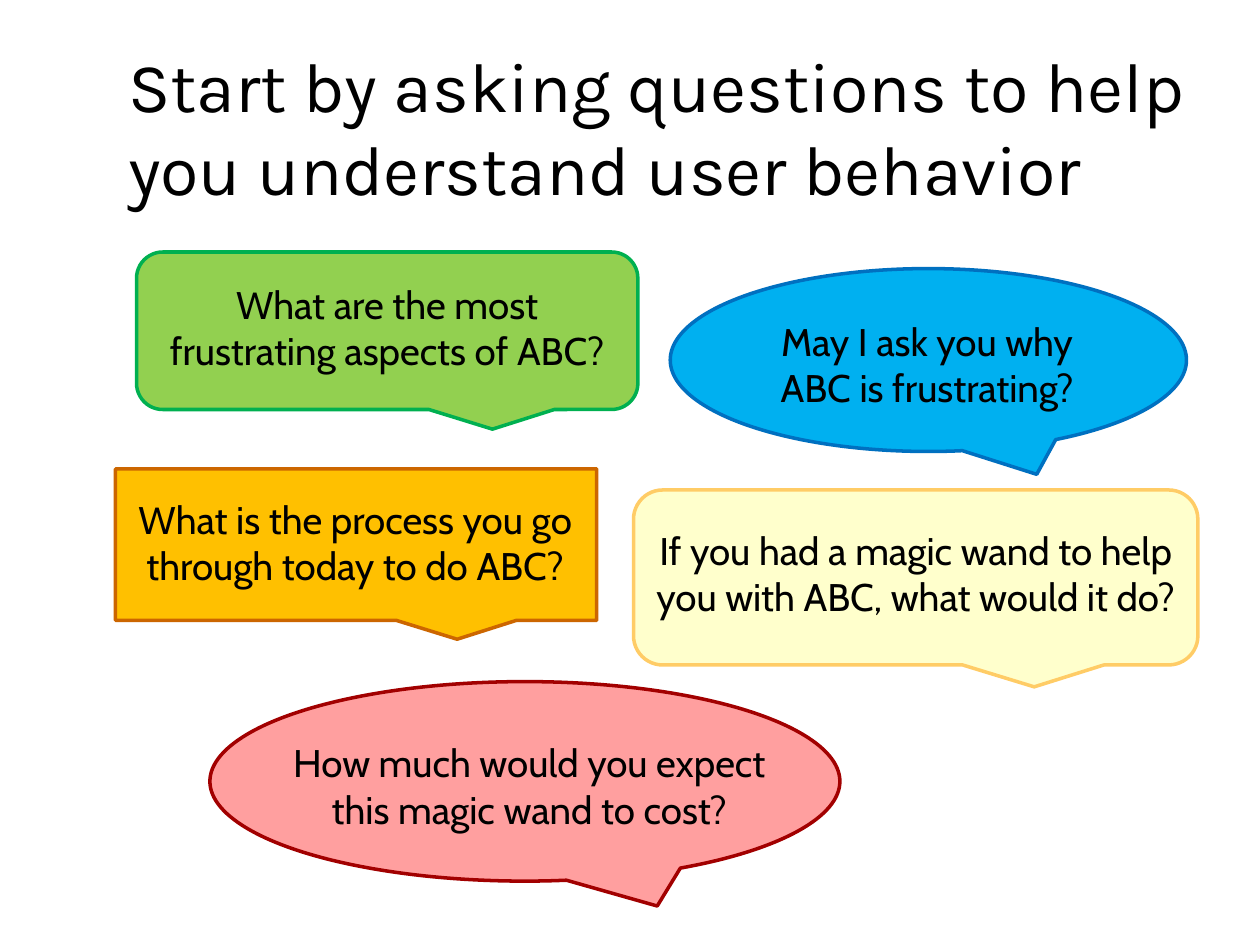
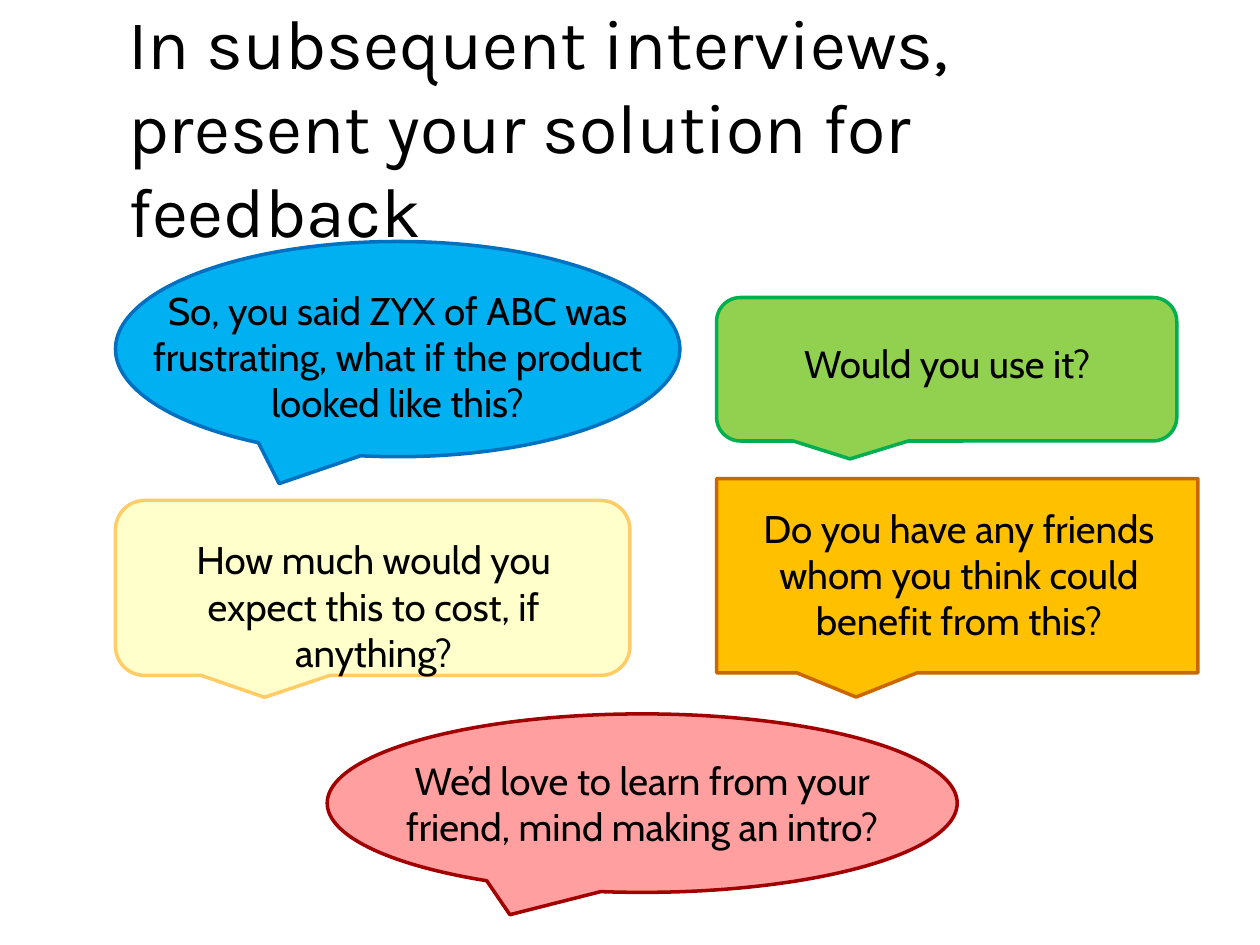
from dataclasses import dataclass

from pptx import Presentation
from pptx.dml.color import RGBColor
from pptx.enum.shapes import MSO_SHAPE
from pptx.enum.text import MSO_ANCHOR, MSO_AUTO_SIZE, PP_ALIGN
from pptx.slide import Slide
from pptx.text.text import TextFrame
from pptx.util import Pt

HUES = {
    "ink": "000000",
    "green": "92D050", "green_edge": "00B050",
    "cream": "FFFFCC", "cream_edge": "FFCC66",
    "gold": "FFC000", "gold_edge": "CC6600",
    "pink": "FF9F9F", "pink_edge": "A20000",
    "blue": "00B0F0", "blue_edge": "0070C0",
}
FORMS = {
    "green": MSO_SHAPE.ROUNDED_RECTANGULAR_CALLOUT,
    "cream": MSO_SHAPE.ROUNDED_RECTANGULAR_CALLOUT,
    "gold": MSO_SHAPE.RECTANGULAR_CALLOUT,
    "pink": MSO_SHAPE.OVAL_CALLOUT,
    "blue": MSO_SHAPE.OVAL_CALLOUT,
}
TAIL = 0.21
Box = tuple[float, float, float, float]


@dataclass
class Bubble:
    """A speech bubble: its hue, outline box, text box and words."""
    hue: str
    box: Box
    area: Box
    words: str


@dataclass
class Page:
    """A slide: its title, the side its tails lean to, and its bubbles."""
    title: str
    lean: int
    bubbles: list[Bubble]


PAGES = [
    Page("Start by asking questions to help you understand user behavior", 1, [
        Bubble("green", (78, 144, 286.5, 90), (87, 157, 268.5, 60.5),
               "What are the most frustrating aspects of ABC?"),
        Bubble("cream", (362, 280, 322.5, 100), (362, 297.5, 322.5, 60.5),
               "If you had a magic wand to help you with ABC, what would it do?"),
        Bubble("gold", (66, 268, 275, 86.5), (69, 280, 268, 60.5),
               "What is the process you go through today to do ABC?"),
        Bubble("pink", (120, 389.5, 360, 114), (143.5, 419, 318, 60.5),
               "How much would you expect this magic wand to cost?"),
        Bubble("blue", (383, 153.5, 295, 104.5), (420, 178, 219.5, 60.5),
               "May I ask you why ABC is frustrating?"),
    ]),
    Page("In subsequent interviews, present your solution for feedback", -1, [
        Bubble("green", (409.5, 170, 263, 82), (418.5, 191, 245.5, 31),
               "Would you use it?"),
        Bubble("cream", (66, 286, 294, 100), (73.5, 303, 280, 60.5),
               "How much would you expect this to cost, if anything?"),
        Bubble("gold", (409.5, 273.5, 275, 111), (414, 285, 268, 112),
               "Do you have any friends whom you think could benefit from this?"),
        Bubble("pink", (187, 408, 360, 102), (208, 429, 318, 54),
               "We’d love to learn from your friend, mind making an intro?"),
        Bubble("blue", (66, 138, 322.5, 123), (66, 160.5, 322.5, 87),
               "So, you said ZYX of ABC was frustrating, what if the product looked like this?"),
    ]),
]


def tint(name: str) -> RGBColor:
    """Return the named colour."""
    return RGBColor.from_string(HUES[name])


def write(frame: TextFrame, words: str, face: str, size: float, align: PP_ALIGN) -> None:
    """Write one styled run into a wrapping text frame."""
    frame.word_wrap = True
    frame.auto_size = MSO_AUTO_SIZE.NONE
    para = frame.paragraphs[0]
    para.alignment = align
    run = para.add_run()
    run.text = words
    run.font.name = face
    run.font.size = Pt(size)
    run.font.color.rgb = tint("ink")


def head(slide: Slide, words: str) -> None:
    """Place and fill the slide title."""
    title = slide.shapes.title
    title.left, title.top, title.width, title.height = map(Pt, (66, 18, 618, 108))
    title.text_frame.vertical_anchor = MSO_ANCHOR.MIDDLE
    write(title.text_frame, words, "Karla", 40, PP_ALIGN.LEFT)


def draw(slide: Slide, bubble: Bubble, lean: int) -> None:
    """Draw a bubble and its words as one group."""
    group = slide.shapes.add_group_shape()
    shape = group.shapes.add_shape(FORMS[bubble.hue], *map(Pt, bubble.box))
    shape.adjustments[0] = lean * TAIL
    shape.shadow.inherit = False
    shape.fill.solid()
    shape.fill.fore_color.rgb = tint(bubble.hue)
    shape.line.color.rgb = tint(f"{bubble.hue}_edge")
    shape.line.width = Pt(2)
    label = group.shapes.add_textbox(*map(Pt, bubble.area))
    write(label.text_frame, bubble.words, "Cabin", 22, PP_ALIGN.CENTER)


def main() -> None:
    """Build and save the deck."""
    deck = Presentation()
    deck.slide_width, deck.slide_height = Pt(720), Pt(540)
    for page in PAGES:
        slide = deck.slides.add_slide(deck.slide_layouts[5])
        head(slide, page.title)
        for bubble in page.bubbles:
            draw(slide, bubble, page.lean)
    deck.save("out.pptx")


if __name__ == "__main__":
    main()
